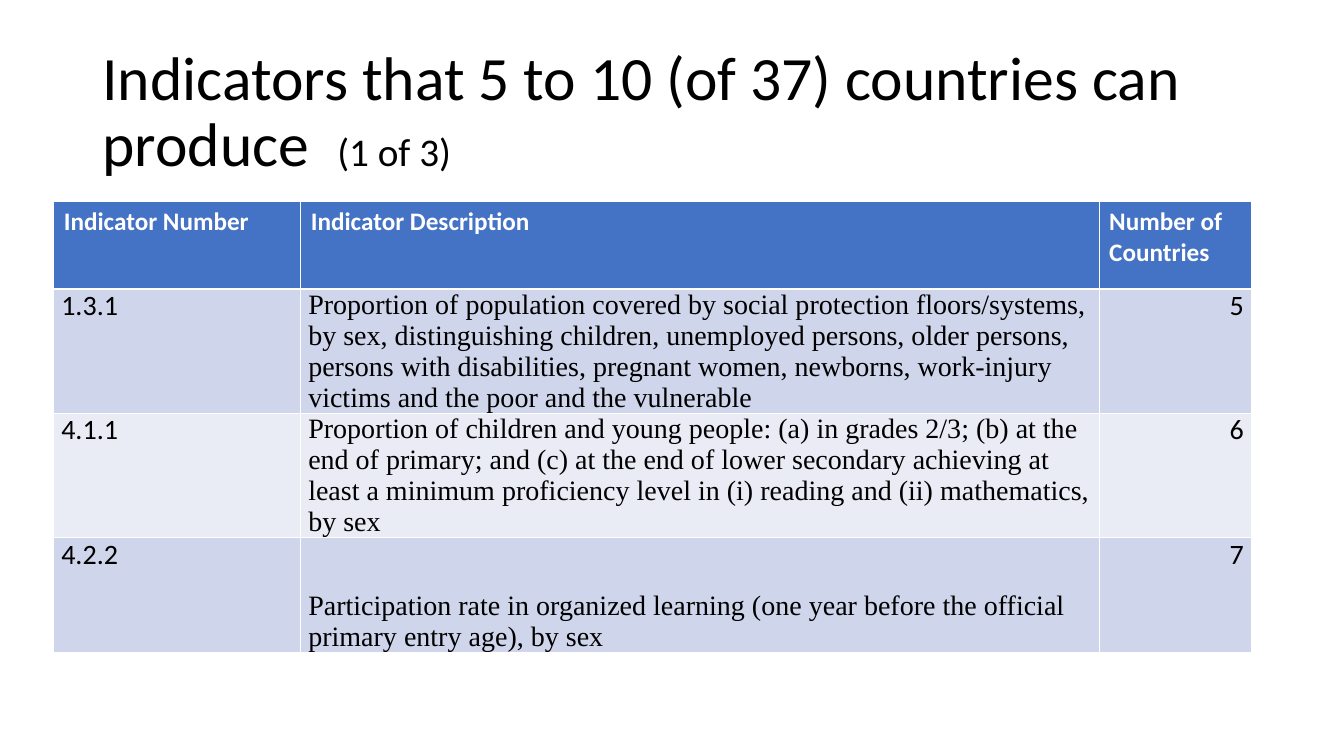
import pptx
import pptx.util
import pptx.dml.color
import pptx.enum.text
from dataclasses import dataclass

Pt = pptx.util.Pt
PP_ALIGN = pptx.enum.text.PP_ALIGN
MSO_ANCHOR = pptx.enum.text.MSO_ANCHOR


@dataclass(frozen=True)
class Theme:
    black: str = "000000"
    white: str = "FFFFFF"
    header: str = "4472C4"
    bands: tuple = ("CFD5EA", "E9EBF5")
    sans: str = "Calibri"
    serif: str = "Times New Roman"
    title: int = 44
    counter: int = 28
    head: int = 18
    body: int = 20


T = Theme()


def add_text(p, text, size=T.body, font=T.sans, color=T.black, bold=False,
             align=PP_ALIGN.LEFT):
    p.alignment = align
    r = p.add_run()
    r.text = text
    r.font.size = Pt(size)
    r.font.name = font
    r.font.bold = bold
    r.font.color.rgb = pptx.dml.color.RGBColor.from_string(color)


def fill_cell(cell, color):
    cell.fill.solid()
    cell.fill.fore_color.rgb = pptx.dml.color.RGBColor.from_string(color)


prs = pptx.Presentation()
prs.slide_width, prs.slide_height = Pt(960), Pt(540)
s = prs.slides.add_slide(prs.slide_layouts[5])

# Title
sp = s.shapes.title
sp.left, sp.top, sp.width, sp.height = Pt(66), Pt(28.75), Pt(828), Pt(104.4)
tf = sp.text_frame
tf.word_wrap = True
tf.auto_size = pptx.enum.text.MSO_AUTO_SIZE.NONE
tf.vertical_anchor = MSO_ANCHOR.MIDDLE
p = tf.paragraphs[0]
p.line_spacing = 0.9
add_text(p, "Indicators that 5 to 10 (of 37) countries can produce  ", size=T.title)
add_text(p, "(1 of 3)", size=T.counter)

# Indicator table
headings = ["Indicator Number", "Indicator Description", "Number of Countries"]
indicators = [
    ("1.3.1", "Proportion of population covered by social protection floors/systems, "
     "by sex, distinguishing children, unemployed persons, older persons, persons with "
     "disabilities, pregnant women, newborns, work-injury victims and the poor and the "
     "vulnerable", "5", MSO_ANCHOR.BOTTOM, 12),
    ("4.1.1", "Proportion of children and young people: (a) in grades 2/3; (b) at the end "
     "of primary; and (c) at the end of lower secondary achieving at least a minimum "
     "proficiency level in (i) reading and (ii) mathematics, by sex", "6",
     MSO_ANCHOR.TOP, 0),
    ("4.2.2", "Participation rate in organized learning (one year before the official "
     "primary entry age), by sex", "7", MSO_ANCHOR.BOTTOM, 0),
]
col_widths = [176.4, 570.3, 108.7]
row_heights = [62.4] + [82.2] * len(indicators)
tbl = s.shapes.add_table(len(row_heights), len(col_widths), Pt(38.4), Pt(144),
                         Pt(sum(col_widths)), Pt(sum(row_heights))).table
for col, width in zip(tbl.columns, col_widths):
    col.width = Pt(width)
for row, height in zip(tbl.rows, row_heights):
    row.height = Pt(height)

for c, heading in enumerate(headings):
    cell = tbl.cell(0, c)
    fill_cell(cell, T.header)
    add_text(cell.text_frame.paragraphs[0], heading, size=T.head, color=T.white, bold=True)

fonts = [T.sans, T.serif, T.sans]
aligns = [PP_ALIGN.LEFT, PP_ALIGN.LEFT, PP_ALIGN.RIGHT]
for i, (*texts, anchor, space) in enumerate(indicators):
    for c, text in enumerate(texts):
        cell = tbl.cell(i + 1, c)
        fill_cell(cell, T.bands[i % 2])
        cell.margin_left = cell.margin_right = Pt(5.4)
        cell.margin_top = cell.margin_bottom = Pt(0)
        cell.vertical_anchor = anchor if c == 1 else MSO_ANCHOR.TOP
        p = cell.text_frame.paragraphs[0]
        p.space_before = Pt(space)
        add_text(p, text, font=fonts[c], align=aligns[c])

prs.save("out.pptx")
